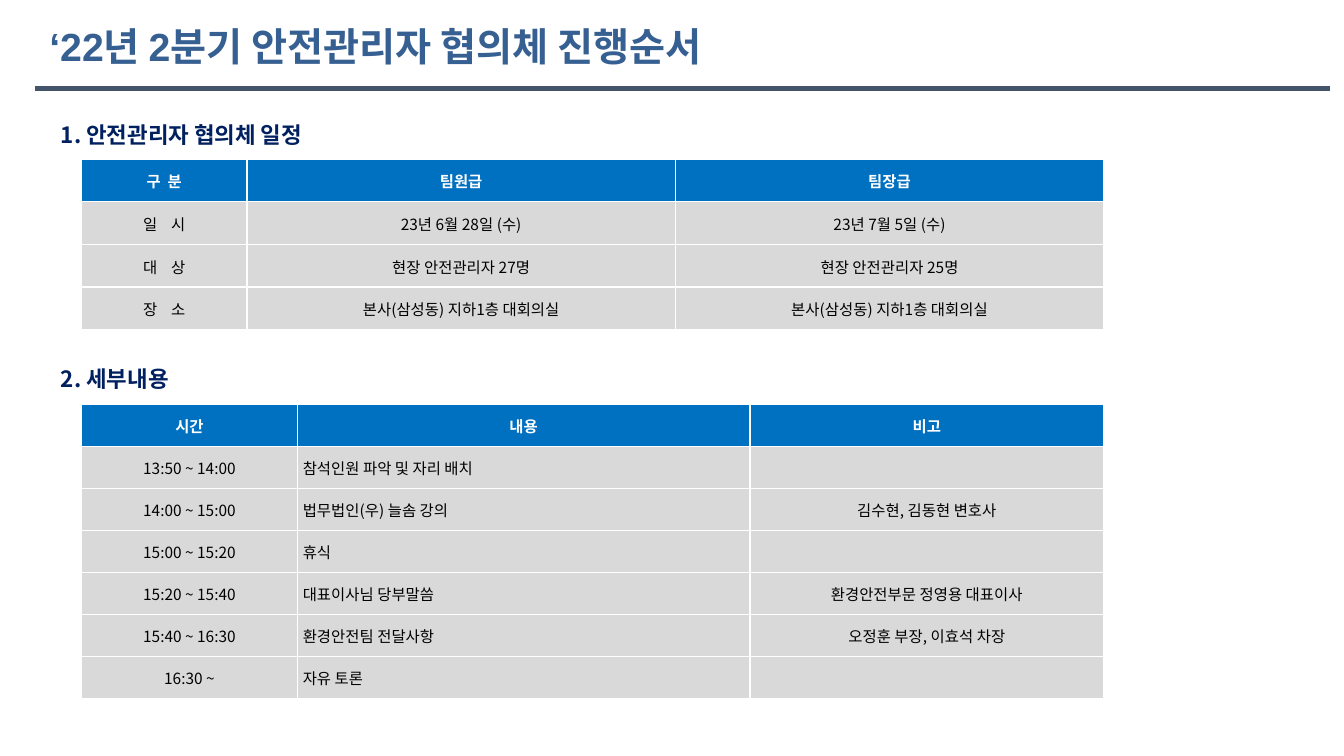
from dataclasses import dataclass

from lxml import etree
from pptx import Presentation
from pptx.dml.color import RGBColor
from pptx.enum.shapes import MSO_CONNECTOR
from pptx.enum.text import MSO_ANCHOR, PP_ALIGN
from pptx.oxml.ns import qn
from pptx.util import Inches, Pt

STRAIGHT = MSO_CONNECTOR.STRAIGHT
MIDDLE = MSO_ANCHOR.MIDDLE
LEFT, CENTER = PP_ALIGN.LEFT, PP_ALIGN.CENTER

COLORS = {
    "title": "376092",
    "rule": "44546A",
    "heading": "002060",
    "header": "0070C0",
    "body": "D9D9D9",
    "white": "FFFFFF",
    "black": "000000",
}
LATIN_TITLE = "Arial"
KOREAN = "Noto Sans CJK KR"

SLIDE_WIDTH, SLIDE_HEIGHT = Inches(13.33), Inches(7.5)
GRID_COLUMNS, GRID_ROWS = 160, 90
TABLE_LEFT = 9.72
CELL_MARGIN = 0.12
INDENTED_MARGIN = 0.65


@dataclass(frozen=True)
class TextBox:
    text: str
    left: float
    top: float
    width: float
    height: float
    size: int
    color: str
    font: str
    inset_x: float
    inset_y: float


@dataclass(frozen=True)
class Schedule:
    top: float
    row_height: float
    widths: tuple[float, ...]
    rows: tuple[tuple[str, ...], ...]
    left_column: int | None = None
    label_spacing: tuple[float, ...] = ()


def heading(text: str, top: float) -> TextBox:
    return TextBox(text, 6.72, top, 39.24, 4.68, 16, "heading", KOREAN, 0.54, 0)


BOXES = (
    TextBox("‘22년 2분기 안전관리자 협의체 진행순서", 4.2, 1.8, 110.04, 7.32,
            28, "title", LATIN_TITLE, 1.68, 0.84),
    heading("1. 안전관리자 협의체 일정", 13.68),
    heading("2. 세부내용", 42.72),
)

SCHEDULES = (
    Schedule(
        top=18.96,
        row_height=5.07,
        widths=(19.68, 51, 51),
        rows=(
            ("구 분", "팀원급", "팀장급"),
            ("일 시", "23년 6월 28일 (수)", "23년 7월 5일 (수)"),
            ("대 상", "현장 안전관리자 27명", "현장 안전관리자 25명"),
            ("장 소", "본사(삼성동) 지하1층 대회의실", "본사(삼성동) 지하1층 대회의실"),
        ),
        label_spacing=(1.2, 3.7, 3.7, 3.7),
    ),
    Schedule(
        top=48.12,
        row_height=5,
        widths=(25.68, 53.88, 42.12),
        rows=(
            ("시간", "내용", "비고"),
            ("13:50 ~ 14:00", "참석인원 파악 및 자리 배치", ""),
            ("14:00 ~ 15:00", "법무법인(우) 늘솜 강의", "김수현, 김동현 변호사"),
            ("15:00 ~ 15:20", "휴식", ""),
            ("15:20 ~ 15:40", "대표이사님 당부말씀", "환경안전부문 정영용 대표이사"),
            ("15:40 ~ 16:30", "환경안전팀 전달사항", "오정훈 부장, 이효석 차장"),
            ("16:30 ~", "자유 토론", ""),
        ),
        left_column=1,
    ),
)


def across(columns: float) -> int:
    return round(SLIDE_WIDTH * columns / GRID_COLUMNS)


def down(rows: float) -> int:
    return round(SLIDE_HEIGHT * rows / GRID_ROWS)


def rgb(name: str) -> RGBColor:
    return RGBColor.from_string(COLORS[name])


def write_text(frame, text: str, *, size: int, color: str, font: str = KOREAN,
               bold: bool = True, align=LEFT, spacing: float = 0) -> None:
    para = frame.paragraphs[0]
    para.alignment = align
    span = para.add_run()
    span.text = text
    span.font.size = Pt(size)
    span.font.bold = bold
    span.font.name = font
    span.font.color.rgb = rgb(color)
    properties = span._r.get_or_add_rPr()
    etree.SubElement(properties, qn("a:ea"), typeface=KOREAN)
    if spacing:
        properties.set("spc", str(round(spacing * 100)))


def add_box(page, item: TextBox) -> None:
    box = page.shapes.add_textbox(across(item.left), down(item.top),
                                  across(item.width), down(item.height))
    frame = box.text_frame
    frame.word_wrap = True
    frame.vertical_anchor = MIDDLE
    frame.margin_left = frame.margin_right = across(item.inset_x)
    frame.margin_top = frame.margin_bottom = down(item.inset_y)
    write_text(frame, item.text, size=item.size, color=item.color, font=item.font)


def add_rule(page) -> None:
    rule = page.shapes.add_connector(STRAIGHT, across(4.2), down(10.56),
                                     across(158.3), down(10.56))
    rule.line.color.rgb = rgb("rule")
    rule.line.width = Pt(3.25)
    etree.SubElement(rule._element.spPr, qn("a:effectLst"))


def style_cell(cell, fill: str, left_margin: float) -> None:
    cell.vertical_anchor = MIDDLE
    cell.margin_left = across(left_margin)
    cell.margin_right = across(CELL_MARGIN)
    cell.margin_top = down(CELL_MARGIN)
    cell.margin_bottom = 0
    properties = cell._tc.get_or_add_tcPr()
    for side in ("a:lnL", "a:lnR", "a:lnT", "a:lnB"):
        border = etree.SubElement(properties, qn(side), w=str(Pt(1)))
        solid = etree.SubElement(border, qn("a:solidFill"))
        etree.SubElement(solid, qn("a:srgbClr"), val=COLORS["white"])
    cell.fill.solid()
    cell.fill.fore_color.rgb = rgb(fill)


def add_schedule(page, schedule: Schedule) -> None:
    count = len(schedule.rows)
    table = page.shapes.add_table(
        count, len(schedule.widths), across(TABLE_LEFT), down(schedule.top),
        across(sum(schedule.widths)), down(schedule.row_height * count)).table
    for column, width in zip(table.columns, schedule.widths):
        column.width = across(width)
    for row_index, texts in enumerate(schedule.rows):
        table.rows[row_index].height = down(schedule.row_height)
        is_header = row_index == 0
        for column_index, text in enumerate(texts):
            is_left = column_index == schedule.left_column and not is_header
            cell = table.cell(row_index, column_index)
            style_cell(cell, "header" if is_header else "body",
                       INDENTED_MARGIN if is_left else CELL_MARGIN)
            if not text:
                continue
            is_spaced = column_index == 0 and schedule.label_spacing
            write_text(cell.text_frame, text, size=11, bold=is_header,
                       color="white" if is_header else "black",
                       align=LEFT if is_left else CENTER,
                       spacing=schedule.label_spacing[row_index] if is_spaced else 0)


def main() -> None:
    deck = Presentation()
    deck.slide_width, deck.slide_height = SLIDE_WIDTH, SLIDE_HEIGHT
    page = deck.slides.add_slide(deck.slide_layouts[6])
    add_rule(page)
    for item in BOXES:
        add_box(page, item)
    for schedule in SCHEDULES:
        add_schedule(page, schedule)
    deck.save("out.pptx")


if __name__ == "__main__":
    main()
